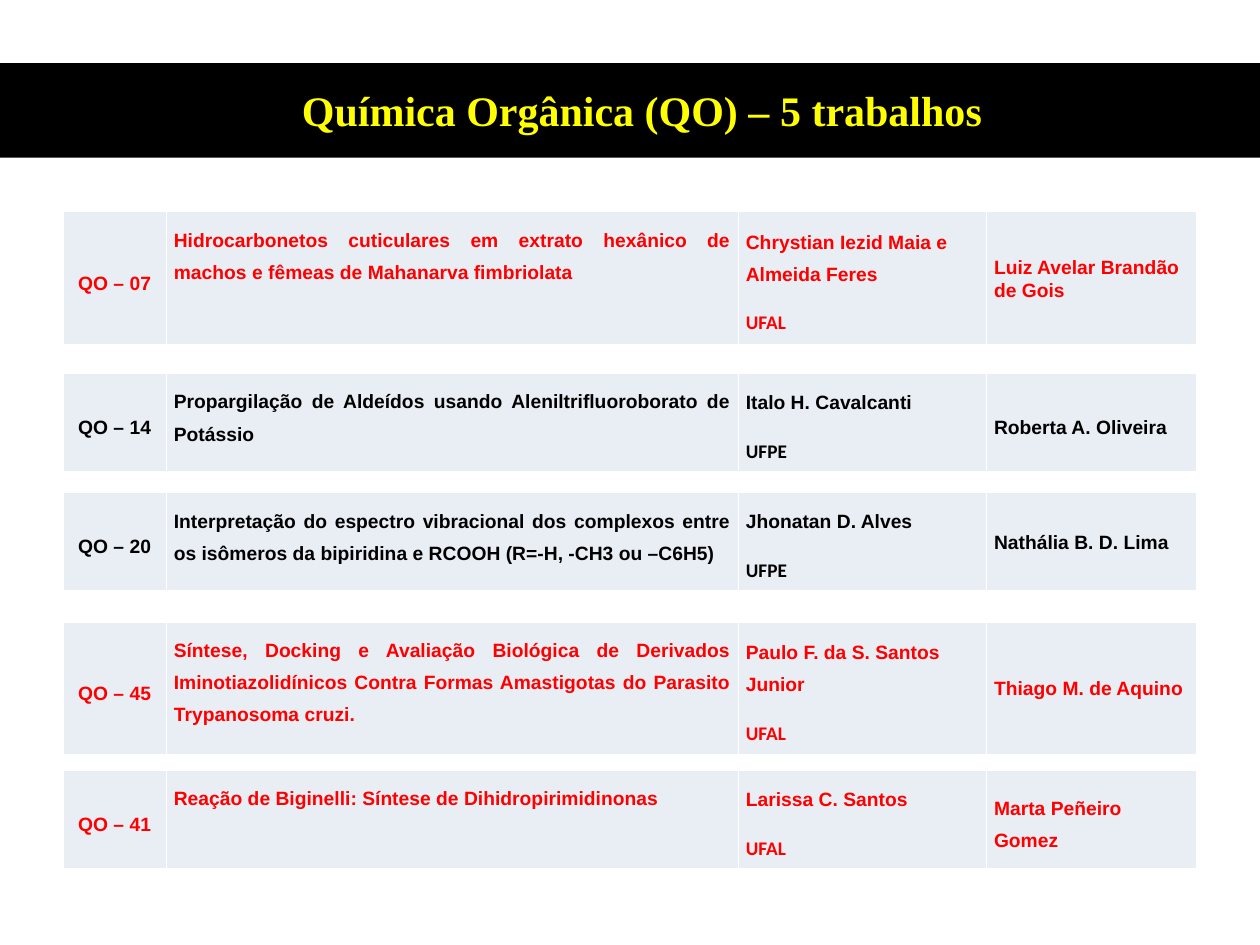
from lxml import etree
from pptx import Presentation
from pptx.dml.color import RGBColor
from pptx.enum.shapes import MSO_SHAPE
from pptx.enum.text import MSO_ANCHOR, MSO_AUTO_SIZE, PP_ALIGN
from pptx.oxml.ns import qn
from pptx.util import Inches, Pt

RECTANGLE = MSO_SHAPE.RECTANGLE
TOP, MIDDLE = MSO_ANCHOR.TOP, MSO_ANCHOR.MIDDLE
LEFT, CENTER, JUSTIFY = PP_ALIGN.LEFT, PP_ALIGN.CENTER, PP_ALIGN.JUSTIFY

BLACK = RGBColor(0x00, 0x00, 0x00)
RED = RGBColor(0xFF, 0x00, 0x00)
YELLOW = RGBColor(0xFF, 0xFF, 0x00)
WHITE = RGBColor(0xFF, 0xFF, 0xFF)
PALE_BLUE = RGBColor(0xE9, 0xED, 0xF4)

COLUMNS = (8.2, 45.4, 19.7, 16.7)  # percent of the slide width
WIDE = (1.5, 8)    # line spacing, points after
TIGHT = (1.07, 5)
TALL, SHORT = 13.8, 10.3  # row heights, percent of the slide height

# top, height, colour, code, title, author, university, advisor, advisor spacing
WORKS = [
    (22.4, TALL, RED, "QO – 07",
     "Hidrocarbonetos cuticulares em extrato hexânico de machos e fêmeas de "
     "Mahanarva fimbriolata",
     "Chrystian Iezid Maia e Almeida Feres", "UFAL",
     "Luiz Avelar Brandão de Gois", TIGHT),
    (39.5, SHORT, BLACK, "QO – 14",
     "Propargilação de Aldeídos usando Aleniltrifluoroborato de Potássio",
     "Italo H. Cavalcanti", "UFPE", "Roberta A. Oliveira", WIDE),
    (52.1, SHORT, BLACK, "QO – 20",
     "Interpretação do espectro vibracional dos complexos entre os isômeros "
     "da bipiridina e RCOOH (R=-H, -CH3 ou –C6H5)",
     "Jhonatan D. Alves", "UFPE", "Nathália B. D. Lima", TIGHT),
    (65.8, TALL, RED, "QO – 45",
     "Síntese, Docking e Avaliação Biológica de Derivados Iminotiazolidínicos "
     "Contra Formas Amastigotas do Parasito Trypanosoma cruzi.",
     "Paulo F. da S. Santos Junior", "UFAL", "Thiago M. de Aquino", TIGHT),
    (81.5, SHORT, RED, "QO – 41",
     "Reação de Biginelli: Síntese de Dihidropirimidinonas",
     "Larissa C. Santos", "UFAL", "Marta Peñeiro Gomez", WIDE),
]


class SlideBuilder:
    """Draws on one slide; all lengths are percentages of the slide's size."""
    heading_font, body_font, university_font = "Times New Roman", "Arial", "Calibri"
    heading_size, body_size = Pt(24), Pt(11)
    inset = Inches(0.06)

    def __init__(self, prs):
        self.prs = prs
        self.slide = prs.slides.add_slide(prs.slide_layouts[6])

    def x(self, share):
        return round(self.prs.slide_width * share / 100)

    def y(self, share):
        return round(self.prs.slide_height * share / 100)

    def box(self, left, top, width, height):
        return self.x(left), self.y(top), self.x(width), self.y(height)

    def style(self, p, font, size, color):
        for r in p.runs:
            r.font.name, r.font.size, r.font.bold = font, size, True
            r.font.color.rgb = color

    def band(self, *area):
        s = self.slide.shapes.add_shape(RECTANGLE, *self.box(*area))
        s.shadow.inherit = False
        s.fill.solid()
        s.fill.fore_color.rgb = BLACK
        s.line.fill.background()

    def heading(self, text, *area):
        tf = self.slide.shapes.add_textbox(*self.box(*area)).text_frame
        tf.word_wrap = True
        tf.auto_size = MSO_AUTO_SIZE.SHAPE_TO_FIT_TEXT
        tf.text = text
        p = tf.paragraphs[0]
        p.alignment = CENTER
        self.style(p, self.heading_font, self.heading_size, YELLOW)

    def borders(self, cell):
        tc_pr = cell._tc.get_or_add_tcPr()
        for side in ("a:lnL", "a:lnR", "a:lnT", "a:lnB"):
            ln = etree.SubElement(tc_pr, qn(side), w=str(Pt(1)))
            fill = etree.SubElement(ln, qn("a:solidFill"))
            etree.SubElement(fill, qn("a:srgbClr"), val=str(WHITE))

    def cell(self, cell, text, color, align, anchor, spacing, margin):
        """Fills a cell; a second line of text is the university."""
        self.borders(cell)
        cell.fill.solid()
        cell.fill.fore_color.rgb = PALE_BLUE
        cell.vertical_anchor = anchor
        cell.margin_left = cell.margin_right = self.inset
        cell.margin_top = cell.margin_bottom = margin
        cell.text_frame.text = text
        fonts = (self.body_font, self.university_font)
        for p, font in zip(cell.text_frame.paragraphs, fonts):
            p.alignment = align
            p.line_spacing, p.space_after = spacing[0], Pt(spacing[1])
            self.style(p, font, self.body_size, color)

    def work(self, top, height, color, code, title, author, university,
             advisor, advisor_spacing):
        area = self.box(5, top, sum(COLUMNS), height)
        table = self.slide.shapes.add_table(1, len(COLUMNS), *area).table
        table.first_row = table.horz_banding = False
        for column, width in zip(table.columns, COLUMNS):
            column.width = self.x(width)
        contents = (
            (code, CENTER, MIDDLE, WIDE, self.inset),
            (title, JUSTIFY, TOP, WIDE, self.inset),
            (f"{author}\n{university}", LEFT, MIDDLE, WIDE, self.inset),
            (advisor, LEFT, MIDDLE, advisor_spacing, 0),
        )
        for i, (text, *layout) in enumerate(contents):
            self.cell(table.cell(0, i), text, color, *layout)


def main():
    prs = Presentation()
    prs.slide_width, prs.slide_height = Inches(10), Inches(7.5)
    builder = SlideBuilder(prs)
    builder.band(0, 6.67, 100, 10)
    builder.heading("Química Orgânica (QO) – 5 trabalhos", 2.7, 8.27, 96.5, 6.67)
    for work in WORKS:
        builder.work(*work)
    prs.save("out.pptx")


if __name__ == "__main__":
    main()
